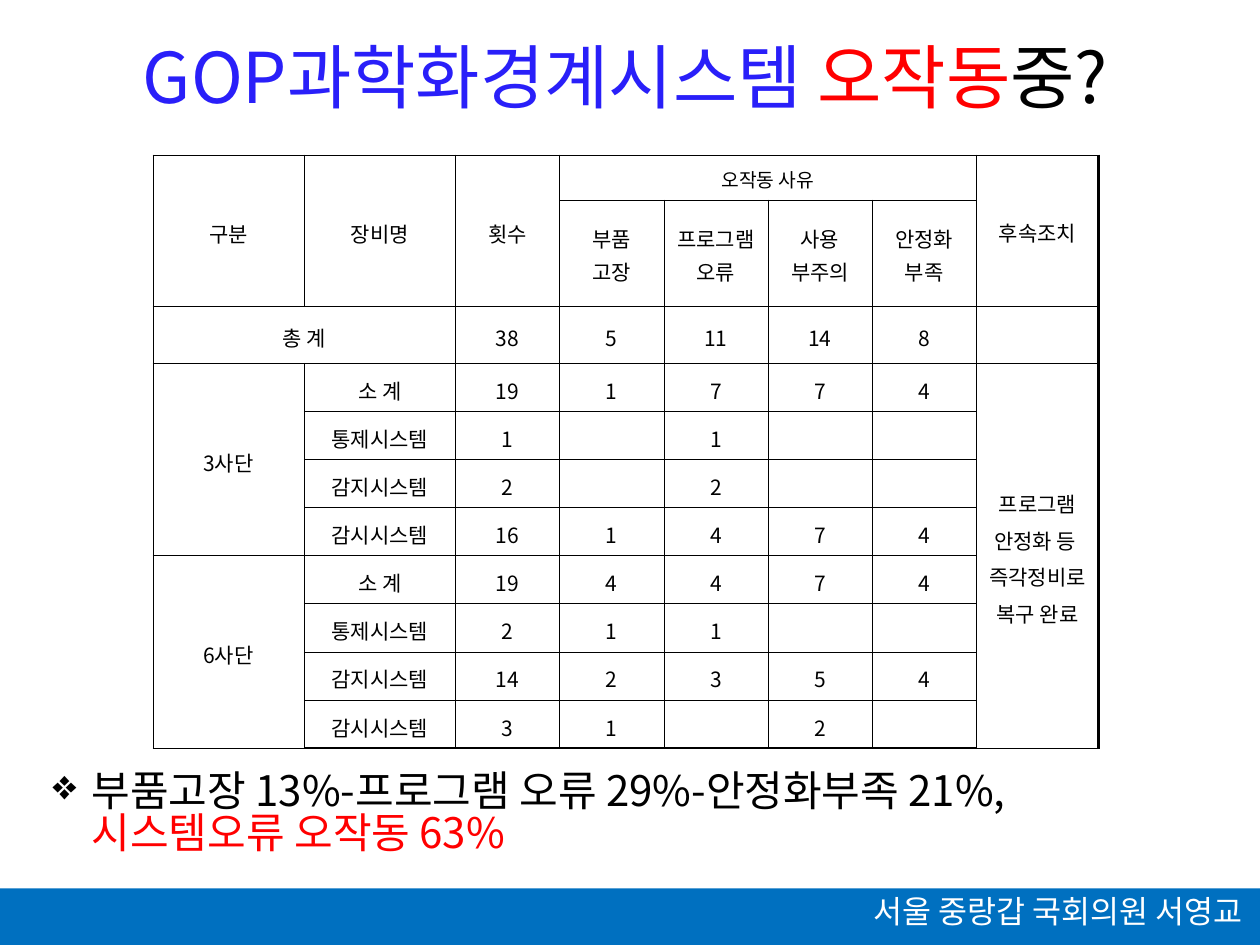
import lxml.etree
import pptx
import pptx.dml.color
import pptx.enum.shapes
import pptx.enum.text
import pptx.oxml.ns
import pptx.util
from pptx.util import Cm, Pt

RGBColor = pptx.dml.color.RGBColor
BLACK = RGBColor(0x00, 0x00, 0x00)
WHITE = RGBColor(0xFF, 0xFF, 0xFF)
RED = RGBColor(0xFF, 0x00, 0x00)
TITLE_BLUE = RGBColor(0x29, 0x1F, 0xF9)
FOOTER_BLUE = RGBColor(0x00, 0x70, 0xC0)
FONT_NAME = "Noto Sans CJK KR"
ALIGN = pptx.enum.text.PP_ALIGN
THIN, THICK = 0.28, 1.7

FRAME_FORMAT = {
    "word_wrap": True,
    "auto_size": pptx.enum.text.MSO_AUTO_SIZE.SHAPE_TO_FIT_TEXT,
    "margin_top": Cm(0.2),
    "margin_bottom": Cm(0.05),
}
CELL_FORMAT = {
    "vertical_anchor": pptx.enum.text.MSO_ANCHOR.MIDDLE,
    "margin_left": Cm(0.18),
    "margin_right": Cm(0.18),
    "margin_top": Cm(0.05),
    "margin_bottom": Cm(0.05),
}
PLAIN_TABLE = {"first_row": False, "horz_banding": False}

COLUMN_WIDTHS = [3.05] * 2 + [2.1] * 5 + [2.47]
ROW_HEIGHTS = [0.91, 2.15, 1.14] + [0.97] * 8
TABLE_ROWS = [
    ["구분", "장비명", "횟수", "오작동 사유", "", "", "", "후속조치"],
    ["", "", "", "부품\n고장", "프로그램\n오류", "사용\n부주의", "안정화\n부족", ""],
    ["총 계", "", "38", "5", "11", "14", "8", ""],
    ["3사단", "소 계", "19", "1", "7", "7", "4", "프로그램 안정화 등 \n즉각정비로\n복구 완료"],
    ["", "통제시스템", "1", "", "1", "", "", ""],
    ["", "감지시스템", "2", "", "2", "", "", ""],
    ["", "감시시스템", "16", "1", "4", "7", "4", ""],
    ["6사단", "소 계", "19", "4", "4", "7", "4", ""],
    ["", "통제시스템", "2", "1", "1", "", "", ""],
    ["", "감지시스템", "14", "2", "3", "5", "4", ""],
    ["", "감시시스템", "3", "1", "", "2", "", ""],
]
MERGES = [
    ((0, 0), (1, 0)), ((0, 1), (1, 1)), ((0, 2), (1, 2)), ((0, 3), (0, 6)),
    ((0, 7), (1, 7)), ((2, 0), (2, 1)), ((3, 0), (6, 0)), ((7, 0), (10, 0)),
    ((3, 7), (10, 7)),
]


def apply_format(target, values):
    """Set each attribute in values on target."""
    for name, value in values.items():
        setattr(target, name, value)


def add_element(parent, tag, **attributes):
    """Append a drawing element to parent and return it."""
    return lxml.etree.SubElement(parent, pptx.oxml.ns.qn(tag), attributes)


def add_run(paragraph, text, size, color):
    """Add a run in the slide font for Latin and Korean text."""
    run = paragraph.add_run()
    run.text = text
    apply_format(run.font, {"name": FONT_NAME, "size": Pt(size)})
    run.font.color.rgb = color
    add_element(run.font._element, "a:ea", typeface=FONT_NAME)


def add_text(slide, box, runs, size, alignment):
    """Add a wrapped text box of coloured runs and return its paragraph."""
    frame = slide.shapes.add_textbox(*map(Cm, box)).text_frame
    apply_format(frame, FRAME_FORMAT)
    paragraph = frame.paragraphs[0]
    apply_format(paragraph, {"alignment": alignment, "line_spacing": 0.84})
    for text, color in runs:
        add_run(paragraph, text, size, color)
    return paragraph


def add_bullet(paragraph, character, indent):
    """Give the paragraph a hanging bullet."""
    properties = paragraph._p.get_or_add_pPr()
    properties.set("marL", str(indent))
    properties.set("indent", str(-indent))
    add_element(properties, "a:buChar", char=character)


def add_bar(slide, box, color):
    """Add a plain filled rectangle."""
    shape = slide.shapes.add_shape(pptx.enum.shapes.MSO_SHAPE.RECTANGLE, *map(Cm, box))
    shape.shadow.inherit = False
    shape.fill.solid()
    shape.fill.fore_color.rgb = color
    shape.line.fill.background()


def set_borders(cell, right, bottom):
    """Draw black lines around a cell with the given right and bottom widths."""
    properties = cell._tc.get_or_add_tcPr()
    for side, width in zip("LRTB", (THIN, right, THIN, bottom)):
        line = add_element(properties, f"a:ln{side}", w=str(int(Pt(width))))
        fill = add_element(line, "a:solidFill")
        add_element(fill, "a:srgbClr", val=str(BLACK))


def fill_cell(cell, text, size, spacing):
    """Write centred lines of text into a cell."""
    apply_format(cell, CELL_FORMAT)
    cell.fill.background()
    frame = cell.text_frame
    for index, line in enumerate(text.split("\n")):
        paragraph = frame.add_paragraph() if index else frame.paragraphs[0]
        apply_format(paragraph, {"alignment": ALIGN.CENTER, "line_spacing": spacing})
        if line:
            add_run(paragraph, line, size, BLACK)
        else:
            add_element(paragraph._p, "a:endParaRPr", sz=str(size * 100))


def add_malfunction_table(slide, left, top):
    """Add the table of malfunctions by division and device."""
    size = len(TABLE_ROWS), len(COLUMN_WIDTHS)
    extent = Cm(sum(COLUMN_WIDTHS)), Cm(sum(ROW_HEIGHTS))
    table = slide.shapes.add_table(*size, Cm(left), Cm(top), *extent).table
    apply_format(table, PLAIN_TABLE)
    for column, width in zip(table.columns, COLUMN_WIDTHS):
        column.width = Cm(width)
    for row, height in zip(table.rows, ROW_HEIGHTS):
        row.height = Cm(height)
    for row_index, texts in enumerate(TABLE_ROWS):
        for column_index, text in enumerate(texts):
            cell = table.cell(row_index, column_index)
            right = THICK if column_index == size[1] - 1 else THIN
            bottom = THICK if row_index == size[0] - 1 else THIN
            set_borders(cell, right, bottom)
            is_reason = row_index < 2 and column_index > 2
            font_size = 11 if (row_index, column_index) == (0, 3) else 12
            fill_cell(cell, text, font_size, 1.1 if is_reason else 1.2)
    for first, last in MERGES:
        table.cell(*first).merge(table.cell(*last))


def main():
    """Build the slide and save it."""
    presentation = pptx.Presentation()
    apply_format(presentation, {"slide_width": Cm(25.4), "slide_height": Cm(19.05)})
    slide = presentation.slides.add_slide(presentation.slide_layouts[6])
    title = [("GOP과학화경계시스템 ", TITLE_BLUE), ("오작동", RED), ("중?", BLACK)]
    add_text(slide, (0.71, 0.74, 23.8, 1.96), title, 40, ALIGN.CENTER)
    add_bar(slide, (0, 17.91, 25.4, 1.14), FOOTER_BLUE)
    footer = [("서울 중랑갑 국회의원 서영교", WHITE)]
    add_text(slide, (15.29, 17.91, 10.01, 1.04), footer, 18, ALIGN.RIGHT)
    summary = [
        ("부품고장 13%-프로그램 오류 29%-안정화부족 21%, ", BLACK),
        ("시스템오류 오작동 63%", RED),
    ]
    paragraph = add_text(slide, (0.81, 15.37, 23.6, 2.31), summary, 24, ALIGN.LEFT)
    add_bullet(paragraph, "❖", Cm(0.79))
    add_malfunction_table(slide, 3.08, 3.12)
    presentation.save("out.pptx")


if __name__ == "__main__":
    main()
